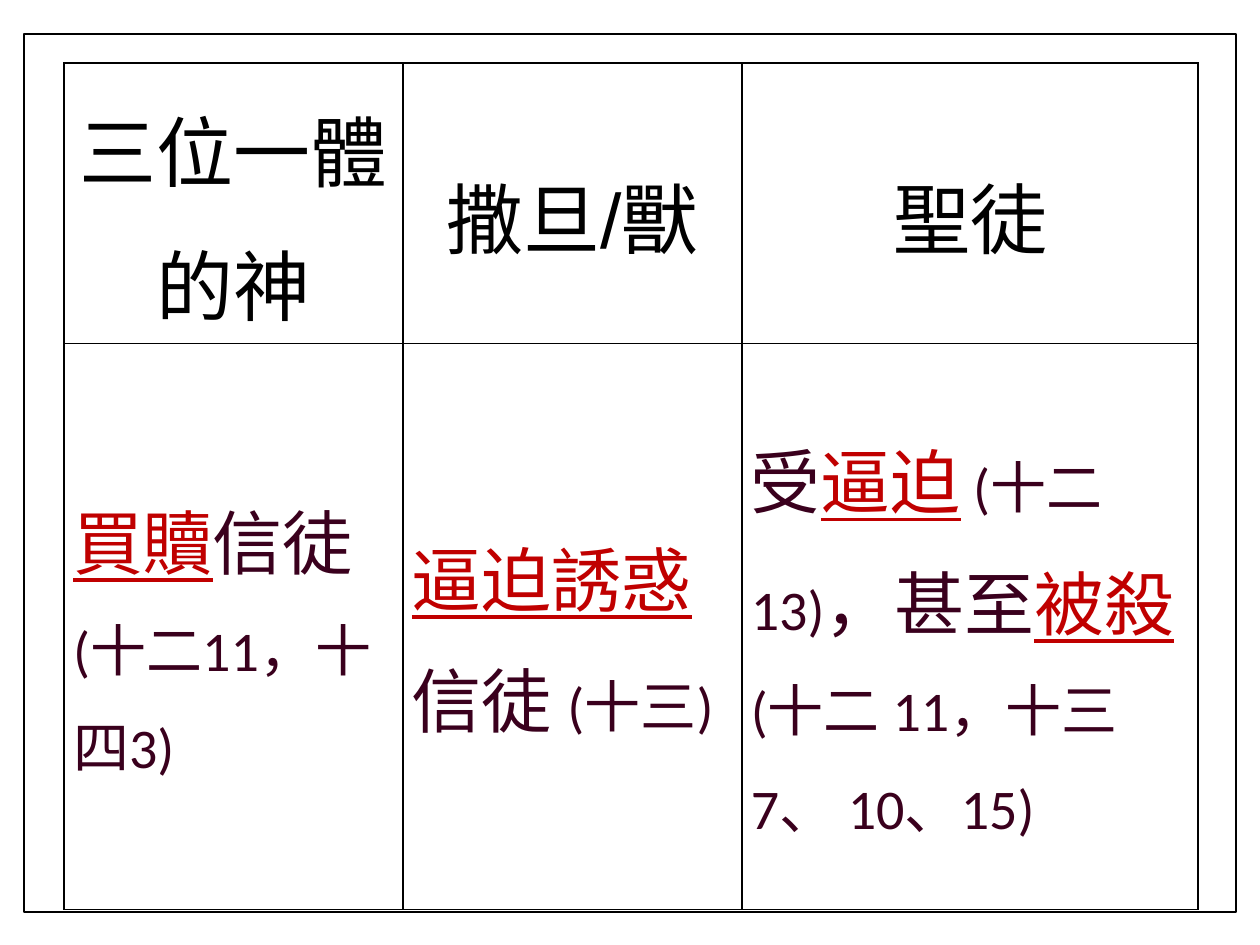
from dataclasses import dataclass
from lxml import etree
from pptx import Presentation
from pptx.dml.color import RGBColor
from pptx.enum import shapes, text
from pptx.oxml import ns
from pptx.util import Inches, Pt


@dataclass(frozen=True)
class Theme:
    paper: str = "FFFFFF"
    ink: str = "000000"
    verse: str = "3A001D"
    accent: str = "C00000"
    heading_font: str = "Arial"
    body_font: str = "Calibri"
    heading_size: int = 44
    body_size: int = 40
    reference_size: int = 32
    border_width: int = 1


THEME = Theme()


@dataclass(frozen=True)
class Span:
    words: str
    size: int = THEME.body_size
    color: str = THEME.verse
    font: str = THEME.body_font
    underline: bool = False


@dataclass(frozen=True)
class Column:
    width: float
    heading: str
    body: tuple[Span, ...]


def write(paragraph, words: str, *, size: int, color: str, font: str, underline: bool = False) -> None:
    span = paragraph.add_run()
    span.text = words
    span.font.size = Pt(size)
    span.font.name = font
    span.font.bold = False
    span.font.underline = underline
    span.font.color.rgb = RGBColor.from_string(color)


def heading(words: str) -> Span:
    return Span(words, THEME.heading_size, THEME.ink, THEME.heading_font)


def key(words: str) -> Span:
    return Span(words, color=THEME.accent, underline=True)


def reference(words: str) -> Span:
    return Span(words, THEME.reference_size)


def add_borders(cell) -> None:
    properties = cell._tc.get_or_add_tcPr()
    for position, side in enumerate(("lnL", "lnR", "lnT", "lnB")):
        line = etree.Element(ns.qn(f"a:{side}"), w=str(Pt(THEME.border_width)))
        fill = etree.SubElement(line, ns.qn("a:solidFill"))
        etree.SubElement(fill, ns.qn("a:srgbClr"), val=THEME.ink)
        properties.insert(position, line)


def fill_cell(cell, spans: tuple[Span, ...], align: text.PP_ALIGN) -> None:
    cell.fill.background()
    cell.vertical_anchor = text.MSO_ANCHOR.MIDDLE
    cell.margin_left = cell.margin_right = Inches(0.07)
    cell.margin_top = cell.margin_bottom = Inches(0.05)
    add_borders(cell)
    paragraph = cell.text_frame.paragraphs[0]
    paragraph.alignment = align
    paragraph.line_spacing = 1.2
    paragraph.space_before = paragraph.space_after = Pt(6)
    for span in spans:
        write(paragraph, span.words, size=span.size, color=span.color,
              font=span.font, underline=span.underline)


def add_frame(page) -> None:
    frame = page.shapes.add_shape(shapes.MSO_SHAPE.RECTANGLE, Inches(0.19), Inches(0.27),
                                  Inches(9.62), Inches(6.97))
    frame.shadow.inherit = False
    frame.fill.solid()
    frame.fill.fore_color.rgb = RGBColor.from_string(THEME.paper)
    frame.line.color.rgb = RGBColor.from_string(THEME.ink)
    frame.line.width = Pt(THEME.border_width)


def add_comparison(page, columns: tuple[Column, ...], heights: tuple[float, float]) -> None:
    table = page.shapes.add_table(len(heights), len(columns), Inches(0.51), Inches(0.5),
                                  Inches(sum(column.width for column in columns)),
                                  Inches(sum(heights))).table
    table.first_row = table.horz_banding = False
    for row, height in zip(table.rows, heights):
        row.height = Inches(height)
    for index, column in enumerate(columns):
        table.columns[index].width = Inches(column.width)
        fill_cell(table.cell(0, index), (heading(column.heading),), text.PP_ALIGN.CENTER)
        fill_cell(table.cell(1, index), column.body, text.PP_ALIGN.LEFT)


COLUMNS = (
    Column(2.69, "三位一體的神", (key("買贖"), Span("信徒  "), reference("(十二11，十四3)"))),
    Column(2.69, "撒旦/獸", (key("逼迫誘惑"), Span("信徒 "), reference("(十三)"))),
    Column(3.62, "聖徒", (Span("受"), key("逼迫"), reference(" (十二 13)"), Span("，甚至"),
                        key("被殺"), reference("(十二 11，十三 7、 10、15)"))),
)


def main() -> None:
    deck = Presentation()
    deck.slide_width, deck.slide_height = Inches(10), Inches(7.5)
    page = deck.slides.add_slide(deck.slide_layouts[6])
    add_frame(page)
    add_comparison(page, COLUMNS, (2.02, 4.49))
    deck.save("out.pptx")


if __name__ == "__main__":
    main()
